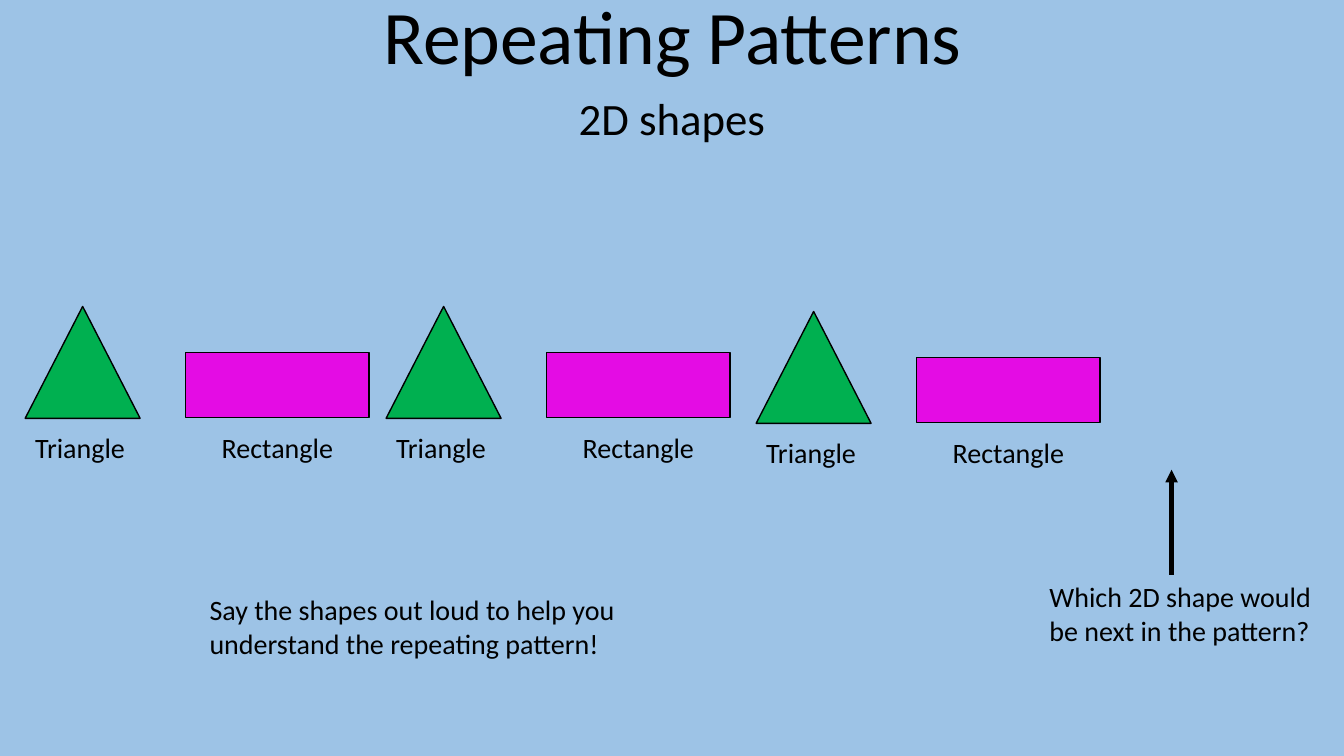
from lxml import etree
from pptx import Presentation
from pptx.dml.color import RGBColor
from pptx.enum.shapes import MSO_CONNECTOR, MSO_SHAPE
from pptx.enum.text import MSO_AUTO_SIZE, PP_ALIGN
from pptx.oxml.ns import qn
from pptx.util import Inches, Pt

TRIANGLE = MSO_SHAPE.ISOSCELES_TRIANGLE
RECT = MSO_SHAPE.RECTANGLE
STRAIGHT = MSO_CONNECTOR.STRAIGHT
LEFT, CENTER = PP_ALIGN.LEFT, PP_ALIGN.CENTER
GROW = MSO_AUTO_SIZE.SHAPE_TO_FIT_TEXT

FONT = "Calibri"
COLORS = {"sky": "9DC3E6", "ink": "000000", "green": "00B050", "pink": "E40CE4"}
# Left edge and top of each triangle and rectangle pair
PAIRS = [(0.25, 3.04), (3.83, 3.04), (7.5, 3.09)]


def color(name):
    return RGBColor.from_string(COLORS[name])


def add_text(slide, text, left, top, width, height, size=20, align=LEFT, wrap=True):
    box = slide.shapes.add_textbox(
        Inches(left), Inches(top), Inches(width), Inches(height))
    frame = box.text_frame
    frame.word_wrap = wrap
    frame.auto_size = GROW
    para = frame.paragraphs[0]
    para.text = text
    para.alignment = align
    para.font.name = FONT
    para.font.size = Pt(size)
    para.font.color.rgb = color("ink")


def add_figure(slide, kind, fill, left, top, width, height):
    shape = slide.shapes.add_shape(
        kind, Inches(left), Inches(top), Inches(width), Inches(height))
    shape.shadow.inherit = False
    shape.fill.solid()
    shape.fill.fore_color.rgb = color(fill)
    shape.line.color.rgb = color("ink")
    shape.line.width = Pt(1)


def add_pair(slide, left, top):
    """Draw one unit of the pattern: a triangle and a rectangle, each named."""
    add_figure(slide, TRIANGLE, "green", left, top, 1.14, 1.11)
    add_figure(slide, RECT, "pink", left + 1.59, top + 0.46, 1.82, 0.64)
    add_text(slide, "Triangle", left, top + 1.18, 1.14, 0.44)
    add_text(slide, "Rectangle", left + 1.85, top + 1.18, 1.82, 0.44)


def add_arrow(slide, x1, y1, x2, y2):
    arrow = slide.shapes.add_connector(
        STRAIGHT, Inches(x1), Inches(y1), Inches(x2), Inches(y2))
    arrow.line.color.rgb = color("ink")
    arrow.line.width = Pt(3)
    etree.SubElement(arrow.line._get_or_add_ln(), qn("a:tailEnd"), type="triangle")
    etree.SubElement(arrow._element.spPr, qn("a:effectLst"))


def main():
    deck = Presentation()
    deck.slide_width = Inches(13.33)
    deck.slide_height = Inches(7.5)
    slide = deck.slides.add_slide(deck.slide_layouts[6])
    back = slide.background.fill
    back.solid()
    back.fore_color.rgb = color("sky")

    add_text(slide, "Repeating Patterns", 3.66, -0.16, 6.02, 1.01, 54, CENTER, False)
    add_text(slide, "2D shapes", 0, 0.85, 13.33, 0.64, 32, CENTER)
    for left, top in PAIRS:
        add_pair(slide, left, top)
    add_arrow(slide, 11.62, 5.7, 11.62, 4.66)
    add_text(slide, "Which 2D shape would be next in the pattern?",
             10.31, 5.7, 3.13, 0.77)
    add_text(slide, "Say the shapes out loud to help you understand "
             "the repeating pattern!", 1.98, 5.83, 5, 0.77)
    deck.save("out.pptx")


if __name__ == "__main__":
    main()
